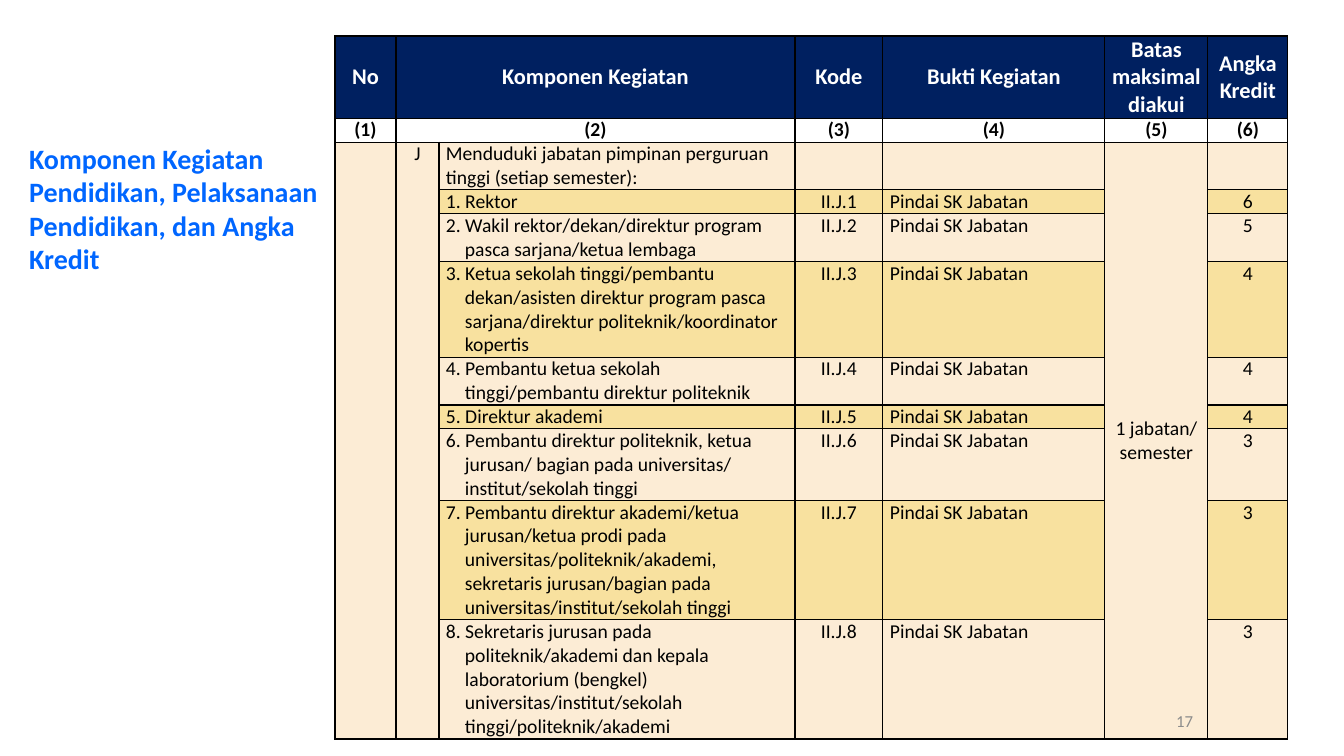
import pptx
import pptx.util
import pptx.dml.color
import pptx.enum.text
import pptx.oxml.ns
import lxml.etree
from dataclasses import dataclass

# Content
TITLE = "Komponen Kegiatan Pendidikan, Pelaksanaan Pendidikan, dan Angka Kredit"
PAGE_NUMBER = "17"
HEADINGS = ["No", "Komponen Kegiatan", "", "Kode", "Bukti Kegiatan",
            "Batas maksimal diakui", "Angka Kredit"]
COLUMN_NUMBERS = ["(1)", "(2)", "", "(3)", "(4)", "(5)", "(6)"]
GROUP = ["", "J", "Menduduki jabatan pimpinan perguruan tinggi (setiap semester):",
         "", "", "1 jabatan/\nsemester", ""]
EVIDENCE = "Pindai SK Jabatan"
POSITIONS = [
    ("Rektor", 6),
    ("Wakil rektor/dekan/direktur program pasca sarjana/ketua lembaga", 5),
    ("Ketua sekolah tinggi/pembantu dekan/asisten direktur program pasca "
     "sarjana/direktur politeknik/koordinator kopertis", 4),
    ("Pembantu ketua sekolah tinggi/pembantu direktur politeknik", 4),
    ("Direktur akademi", 4),
    ("Pembantu direktur politeknik, ketua jurusan/ bagian pada universitas/ "
     "institut/sekolah tinggi", 3),
    ("Pembantu direktur akademi/ketua jurusan/ketua prodi pada "
     "universitas/politeknik/akademi, sekretaris jurusan/bagian pada "
     "universitas/institut/sekolah tinggi", 3),
    ("Sekretaris jurusan pada politeknik/akademi dan kepala laboratorium (bengkel) "
     "universitas/institut/sekolah tinggi/politeknik/akademi", 3),
]

# Layout in px
SLIDE = (1344, 756)
TITLE_BOX = (19, 136, 312, 146)
NUMBER_BOX = (986, 701, 217, 40)
TABLE_CORNER = (335, 36)
COLUMN_WIDTHS = [61, 43, 356, 88, 222, 103, 80]
ROW_HEIGHTS = [80, 24, 47, 23, 48, 94, 47, 23, 71, 118, 118]
HANGING = 19
ITEM, PROOF, LIMIT = 2, 4, 5
FIRST_POSITION = 3


@dataclass(frozen=True)
class Theme:
    font: str = "Calibri"
    title: str = "0066FF"
    header: str = "002060"
    light: str = "FCECD5"
    gold: str = "F8E19F"
    white: str = "FFFFFF"
    black: str = "000000"
    grey: str = "8C8C8C"
    title_size: int = 20
    header_size: int = 16
    body_size: int = 14
    number_size: int = 12


THEME = Theme()
ALIGN = pptx.enum.text.PP_ALIGN
ANCHOR = pptx.enum.text.MSO_ANCHOR


def px(length):
    return pptx.util.Emu(round(length * 914400 / 100.8))


def rgb(colour):
    return pptx.dml.color.RGBColor.from_string(colour)


def format_para(para, size, colour, bold=False, align=ALIGN.LEFT):
    para.alignment = align
    para.font.name = THEME.font
    para.font.size = pptx.util.Pt(size)
    para.font.bold = bold
    para.font.color.rgb = rgb(colour)


def add_borders(cell):
    properties = cell._tc.get_or_add_tcPr()
    tag = pptx.oxml.ns.qn
    for position, side in enumerate(("a:lnL", "a:lnR", "a:lnT", "a:lnB")):
        line = lxml.etree.Element(tag(side), w=str(pptx.util.Pt(1)))
        fill = lxml.etree.SubElement(line, tag("a:solidFill"))
        lxml.etree.SubElement(fill, tag("a:srgbClr"), val=THEME.black)
        properties.insert(position, line)


def format_cell(cell, row, column, text):
    heading = row < 2
    cell.text = text
    cell.margin_top = cell.margin_bottom = 0
    cell.margin_left = cell.margin_right = px(3 if heading else 7)
    middle = row == 0 or (column == LIMIT and not heading)
    cell.vertical_anchor = ANCHOR.MIDDLE if middle else ANCHOR.TOP

    if row == 1:
        cell.fill.background()
    else:
        cell.fill.solid()
        gold = row >= FIRST_POSITION and row % 2 and column not in (0, 1, LIMIT)
        body = THEME.gold if gold else THEME.light
        cell.fill.fore_color.rgb = rgb(THEME.header if row == 0 else body)
    add_borders(cell)

    left = not heading and column in (ITEM, PROOF)
    for para in cell.text_frame.paragraphs:
        if row >= FIRST_POSITION and column == ITEM:
            indents = para._p.get_or_add_pPr()
            indents.set("marL", str(px(HANGING)))
            indents.set("indent", str(px(-HANGING)))
        format_para(para, THEME.header_size if row == 0 else THEME.body_size,
                    THEME.white if row == 0 else THEME.black, heading,
                    ALIGN.LEFT if left else ALIGN.CENTER)


def add_credit_table(page):
    rows = [HEADINGS, COLUMN_NUMBERS, GROUP]
    for number, (position, credit) in enumerate(POSITIONS, 1):
        rows.append(["", "", f"{number}. {position}", f"II.J.{number}",
                     EVIDENCE, "", str(credit)])
    size = (sum(COLUMN_WIDTHS), sum(ROW_HEIGHTS))
    table = page.shapes.add_table(len(rows), len(COLUMN_WIDTHS),
                                  *map(px, TABLE_CORNER + size)).table
    table.first_row = table.horz_banding = False
    for column, width in zip(table.columns, COLUMN_WIDTHS):
        column.width = px(width)
    for row, height in zip(table.rows, ROW_HEIGHTS):
        row.height = px(height)
    for row, texts in enumerate(rows):
        for column, text in enumerate(texts):
            format_cell(table.cell(row, column), row, column, text)

    # Merged headings and full-height columns
    for row in (0, 1):
        table.cell(row, 1).merge(table.cell(row, 2))
    for column in (0, 1, LIMIT):
        table.cell(2, column).merge(table.cell(len(rows) - 1, column))


def main():
    deck = pptx.Presentation()
    deck.slide_width, deck.slide_height = map(px, SLIDE)
    page = deck.slides.add_slide(deck.slide_layouts[5])

    # Title
    title = page.shapes.title
    title.left, title.top, title.width, title.height = map(px, TITLE_BOX)
    title.text_frame.text = TITLE
    title.text_frame.word_wrap = True
    title.text_frame.auto_size = pptx.enum.text.MSO_AUTO_SIZE.NONE
    title.text_frame.vertical_anchor = ANCHOR.TOP
    format_para(title.text_frame.paragraphs[0], THEME.title_size, THEME.title, True)

    # Table
    add_credit_table(page)

    # Page number
    box = page.shapes.add_textbox(*map(px, NUMBER_BOX))
    box.text_frame.text = PAGE_NUMBER
    box.text_frame.word_wrap = True
    box.text_frame.vertical_anchor = ANCHOR.MIDDLE
    format_para(box.text_frame.paragraphs[0], THEME.number_size, THEME.grey,
                align=ALIGN.RIGHT)

    deck.save("out.pptx")


if __name__ == "__main__":
    main()
